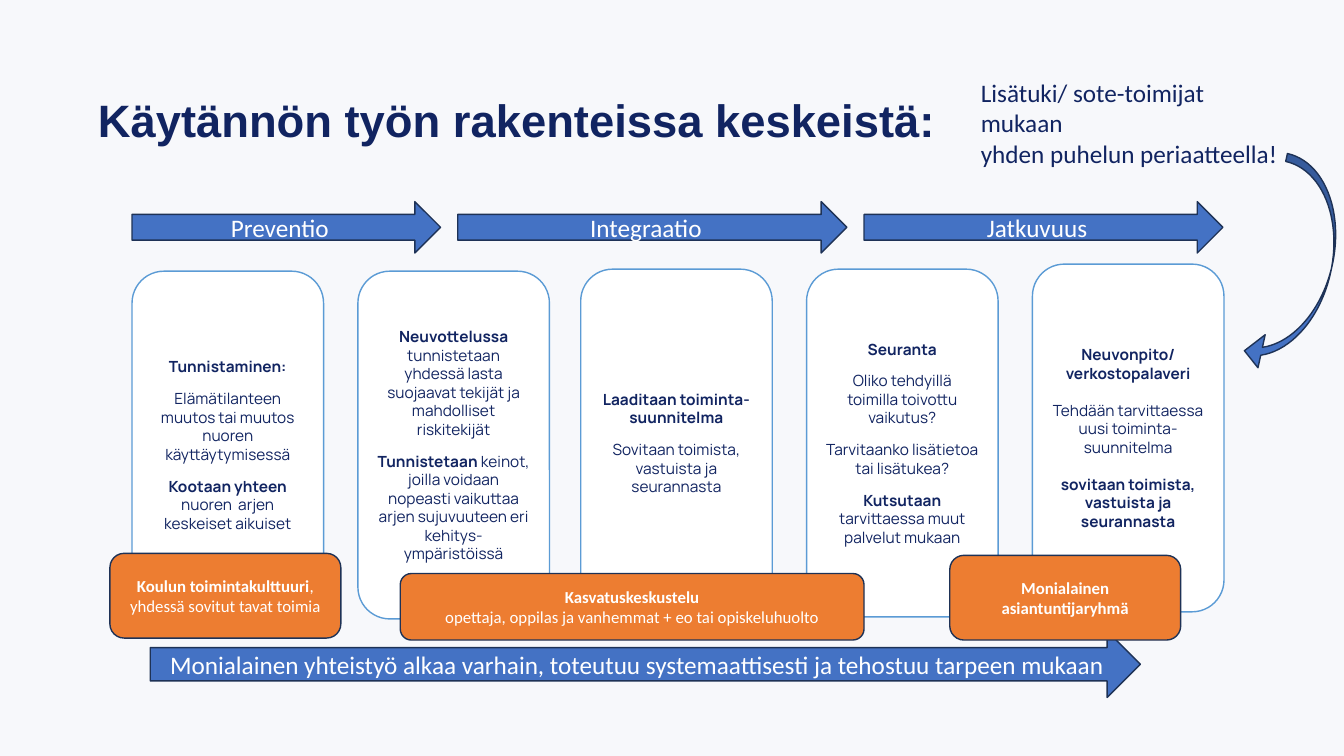
"""Builds the slide on structures for multi-professional work at school."""
from pptx import Presentation
from pptx import util as u
from pptx.dml.color import RGBColor
from pptx.enum import shapes, text

PX = 9144
NAVY = RGBColor(0x11, 0x24, 0x61)
WHITE = RGBColor(0xFF, 0xFF, 0xFF)
BLUE = RGBColor(0x44, 0x72, 0xC4)
SKY = RGBColor(0x5B, 0x9B, 0xD5)
ORANGE = RGBColor(0xED, 0x7D, 0x31)
OUTLINE = RGBColor(0x1E, 0x32, 0x56)
BACKGROUND = RGBColor(0xF7, 0xF8, 0xFB)
KIND = shapes.MSO_SHAPE


def add_shape(kind, box, fill, line):
    sp = s.shapes.add_shape(kind, *(v * PX for v in box))
    sp.shadow.inherit = False
    sp.fill.solid()
    sp.fill.fore_color.rgb = fill
    sp.line.color.rgb = line
    sp.line.width = u.Pt(1)
    return sp


def write(sp, paragraphs, font, size, color, gap=0, align=text.PP_ALIGN.CENTER):
    tf = sp.text_frame
    tf.word_wrap = True
    for i, (bold, regular) in enumerate(paragraphs):
        p = tf.add_paragraph() if i else tf.paragraphs[0]
        p.alignment = align
        if i:
            p.space_before = u.Pt(gap)
        p.font.name, p.font.size = font, u.Pt(size)
        p.font.color.rgb = color
        for words, weight in ((bold, True), (regular, False)):
            if words:
                r = p.add_run()
                r.text = words
                r.font.bold = weight


prs = Presentation()
prs.slide_width, prs.slide_height = 1333 * PX, 750 * PX
s = prs.slides.add_slide(prs.slide_layouts[5])
s.background.fill.solid()
s.background.fill.fore_color.rgb = BACKGROUND

title = s.shapes.title
title.left, title.top, title.width, title.height = (v * PX for v in (97, 89, 1173, 62))
tf = title.text_frame
tf.auto_size = text.MSO_AUTO_SIZE.NONE
tf.vertical_anchor = text.MSO_ANCHOR.BOTTOM
tf.margin_left = 0
write(title, [("Käytännön työn rakenteissa keskeistä:", "")], "Arial", 32.4, NAVY,
      align=text.PP_ALIGN.LEFT)
tf.paragraphs[0].line_spacing = 0.9

cards = [
    (131, 269, 9.6, [
        ("Tunnistaminen:", ""),
        ("", "Elämätilanteen muutos tai muutos nuoren käyttäytymisessä"),
        ("Kootaan yhteen ", "nuoren  arjen keskeiset aikuiset")]),
    (355, 269, 9.6, [
        ("Neuvottelussa", " tunnistetaan yhdessä lasta suojaavat tekijät ja "
         "mahdolliset riskitekijät"),
        ("Tunnistetaan", " keinot, joilla voidaan nopeasti vaikuttaa arjen "
         "sujuvuuteen eri kehitys-ympäristöissä".replace("keinot", "keinot"))]),
    (576, 267, 9.6, [
        ("Laaditaan toiminta-suunnitelma", ""),
        ("", "Sovitaan toimista, vastuista ja seurannasta")]),
    (800, 267, 9.6, [
        ("Seuranta", ""),
        ("", "Oliko tehdyillä toimilla toivottu vaikutus?"),
        ("", "Tarvitaanko lisätietoa tai lisätukea?"),
        ("Kutsutaan", " tarvittaessa muut palvelut mukaan")]),
    (1024, 262, 13.2, [
        ("Neuvonpito/ verkostopalaveri", ""),
        ("", "Tehdään tarvittaessa uusi toiminta-suunnitelma"),
        ("sovitaan toimista, vastuista ja seurannasta", "")]),
]
for left, top, gap, paragraphs in cards:
    card = add_shape(KIND.ROUNDED_RECTANGLE, (left, top, 190, 345), WHITE, SKY)
    write(card, paragraphs, "Manrope", 11, NAVY, gap)

arrows = [
    ((131, 200, 306, 51), "Preventio"),
    ((454, 200, 386, 51), "Integraatio"),
    ((857, 200, 356, 51), "Jatkuvuus"),
    ((149, 626, 982, 66), "Monialainen yhteistyö alkaa varhain, toteutuu "
     "systemaattisesti ja tehostuu tarpeen mukaan"),
]
for box, label in arrows:
    arrow = add_shape(KIND.RIGHT_ARROW, box, BLUE, OUTLINE)
    write(arrow, [("", label)], "Calibri", 18, WHITE)

support = s.shapes.add_textbox(*(v * PX for v in (963, 72, 324, 131)))
write(support, [("", "Lisätuki/ sote-toimijat mukaan"),
                ("", "yhden puhelun periaatteella!")],
      "Calibri", 18, NAVY, align=text.PP_ALIGN.LEFT)

curve = add_shape(KIND.CURVED_LEFT_ARROW, (1253, 157, 67, 217), BLUE, OUTLINE)
curve.rotation = 12.3
for i, value in enumerate((0.12, 0.5, 0.25)):
    curve.adjustments[i] = value

practices = [
    ((109, 549, 229, 84), [("Koulun toimintakulttuuri", ", yhdessä sovitut tavat toimia")]),
    ((397, 569, 460, 66), [
        ("Kasvatuskeskustelu", ""),
        ("", "opettaja, oppilas ja vanhemmat + eo tai opiskeluhuolto")]),
    ((942, 551, 229, 84), [("Monialainen asiantuntijaryhmä", "")]),
]
for box, paragraphs in practices:
    practice = add_shape(KIND.ROUNDED_RECTANGLE, box, ORANGE, OUTLINE)
    write(practice, paragraphs, "Calibri", 12, WHITE)

prs.save("out.pptx")
